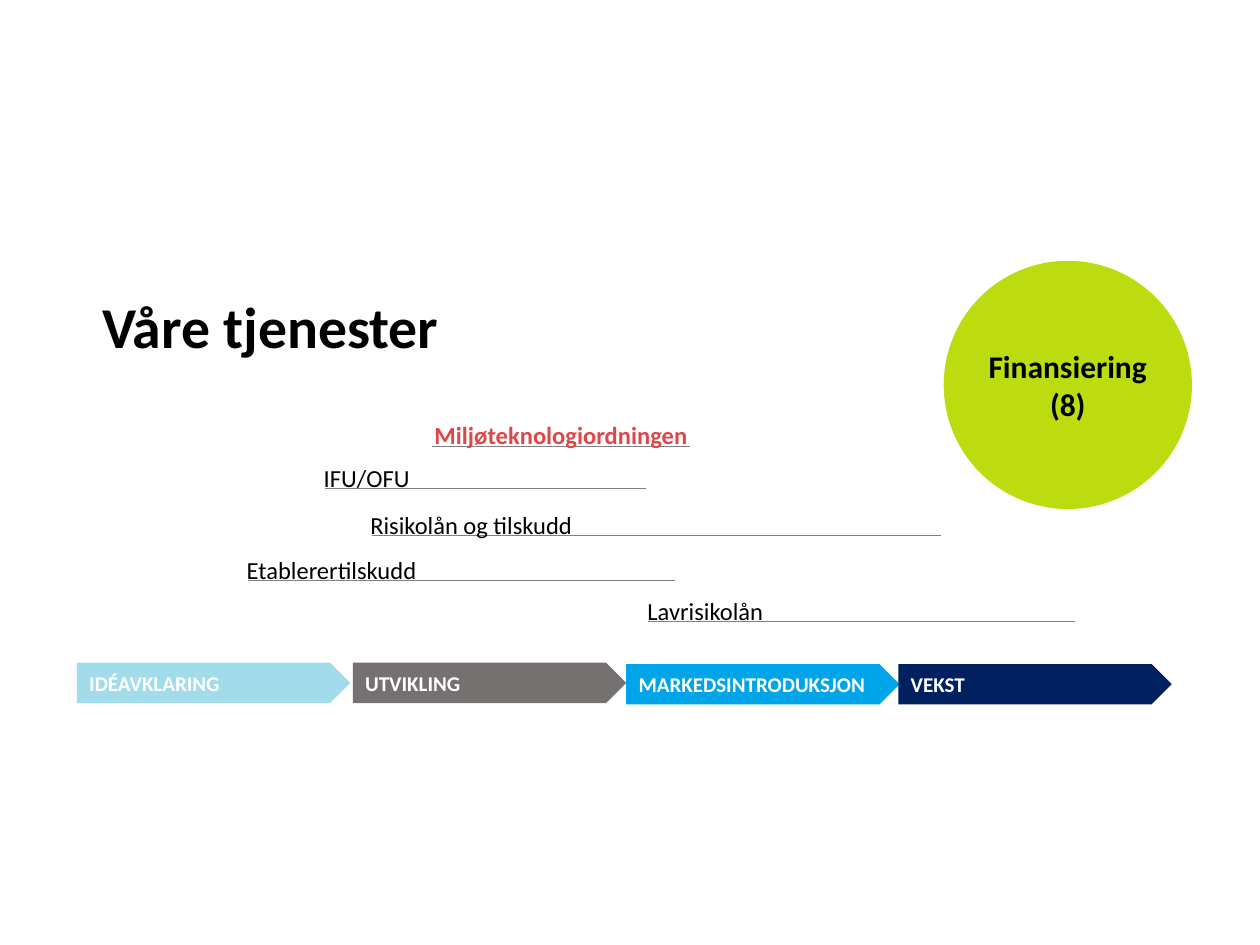
from lxml.etree import SubElement
from pptx import Presentation
from pptx.dml.color import RGBColor
from pptx.enum.shapes import MSO_CONNECTOR, MSO_SHAPE
from pptx.enum.text import MSO_ANCHOR, PP_ALIGN
from pptx.oxml.ns import qn
from pptx.util import Inches, Pt

COLORS = {
    "text": "000000", "white": "FFFFFF", "rule": "808080",
    "highlight": "DE4648", "financing": "BDDC10",
    "idea": "A2DCEB", "development": "767171",
    "launch": "00A4E8", "growth": "002060",
}

presentation = Presentation()
presentation.slide_width, presentation.slide_height = Inches(10), Inches(7.5)
COL = presentation.slide_width / 100
ROW = presentation.slide_height / 100
slide = presentation.slides.add_slide(presentation.slide_layouts[6])


def cells(left, top, width, height):
    """Turn columns and rows of the 100 x 100 slide grid into lengths."""
    return round(left * COL), round(top * ROW), round(width * COL), round(height * ROW)


def write(holder, lines, size, color="text", bold=True, align=PP_ALIGN.LEFT, **frame_format):
    frame = holder.text_frame
    for attribute, value in frame_format.items():
        setattr(frame, attribute, value)
    frame.text = "\n".join(lines)
    for paragraph in frame.paragraphs:
        paragraph.alignment = align
        for attribute, value in {"name": "Calibri", "size": Pt(size), "bold": bold}.items():
            setattr(paragraph.font, attribute, value)
        paragraph.font.color.rgb = RGBColor.from_string(COLORS[color])


# Category circle
financing = slide.shapes.add_shape(MSO_SHAPE.OVAL, *cells(74.9, 27.6, 19.7, 26.27))
financing.shadow.inherit = False
financing.fill.solid()
financing.fill.fore_color.rgb = RGBColor.from_string(COLORS["financing"])
financing.line.fill.background()
write(financing, ["Finansiering", "(8)"], 18, align=PP_ALIGN.CENTER,
      word_wrap=False, vertical_anchor=MSO_ANCHOR.MIDDLE)

# Heading
heading = slide.shapes.add_textbox(*cells(8.1, 30.67, 83.9, 7.47))
write(heading, ["Våre tjenester"], 33, word_wrap=True, vertical_anchor=MSO_ANCHOR.BOTTOM,
      margin_left=0, margin_top=0, margin_right=0, margin_bottom=0)

# Phases along the bottom: label, colour, left column, top row
phases = [
    ("IDÉAVKLARING", "idea", 6.1, 70.13),
    ("UTVIKLING", "development", 28, 70.13),
    ("MARKEDSINTRODUKSJON", "launch", 49.7, 70.27),
    ("VEKST", "growth", 71.3, 70.27),
]
for label, color, left, top in phases:
    phase = slide.shapes.add_shape(MSO_SHAPE.PENTAGON, *cells(left, top, 21.7, 4.27))
    phase.shadow.inherit = False
    phase.fill.solid()
    phase.fill.fore_color.rgb = RGBColor.from_string(COLORS[color])
    phase.line.fill.background()
    write(phase, [label], 12, "white", word_wrap=True, vertical_anchor=MSO_ANCHOR.MIDDLE)

# Services: name, label column, label width, rule start, rule end, rule row
services = [
    ("Miljøteknologiordningen", 33.5, 22.3, 34.3, 54.8, 47.2),
    ("IFU/OFU", 24.7, 8.9, 25.8, 51.3, 51.73),
    ("Risikolån og tilskudd", 28.4, 18.2, 29.5, 74.7, 56.67),
    ("Etablerertilskudd", 18.6, 15.7, 19.7, 53.6, 61.47),
    ("Lavrisikolån", 50.4, 11.3, 51.4, 85.3, 65.73),
]
LABEL_RISE = 3.37
for service, left, width, start, end, row in services:
    x, y, span, _ = cells(start, row, end - start, 0)
    rule = slide.shapes.add_connector(MSO_CONNECTOR.STRAIGHT, x, y, x + span, y)
    rule.line.color.rgb = RGBColor.from_string(COLORS["rule"])
    rule.line.width = Pt(0.5)
    SubElement(rule.element.spPr, qn("a:effectLst"))

    highlighted = service == "Miljøteknologiordningen"
    service_label = slide.shapes.add_textbox(*cells(left, row - LABEL_RISE, width, 4.53))
    write(service_label, [service], 14, "highlight" if highlighted else "text",
          bold=highlighted, word_wrap=False)

presentation.save("out.pptx")
